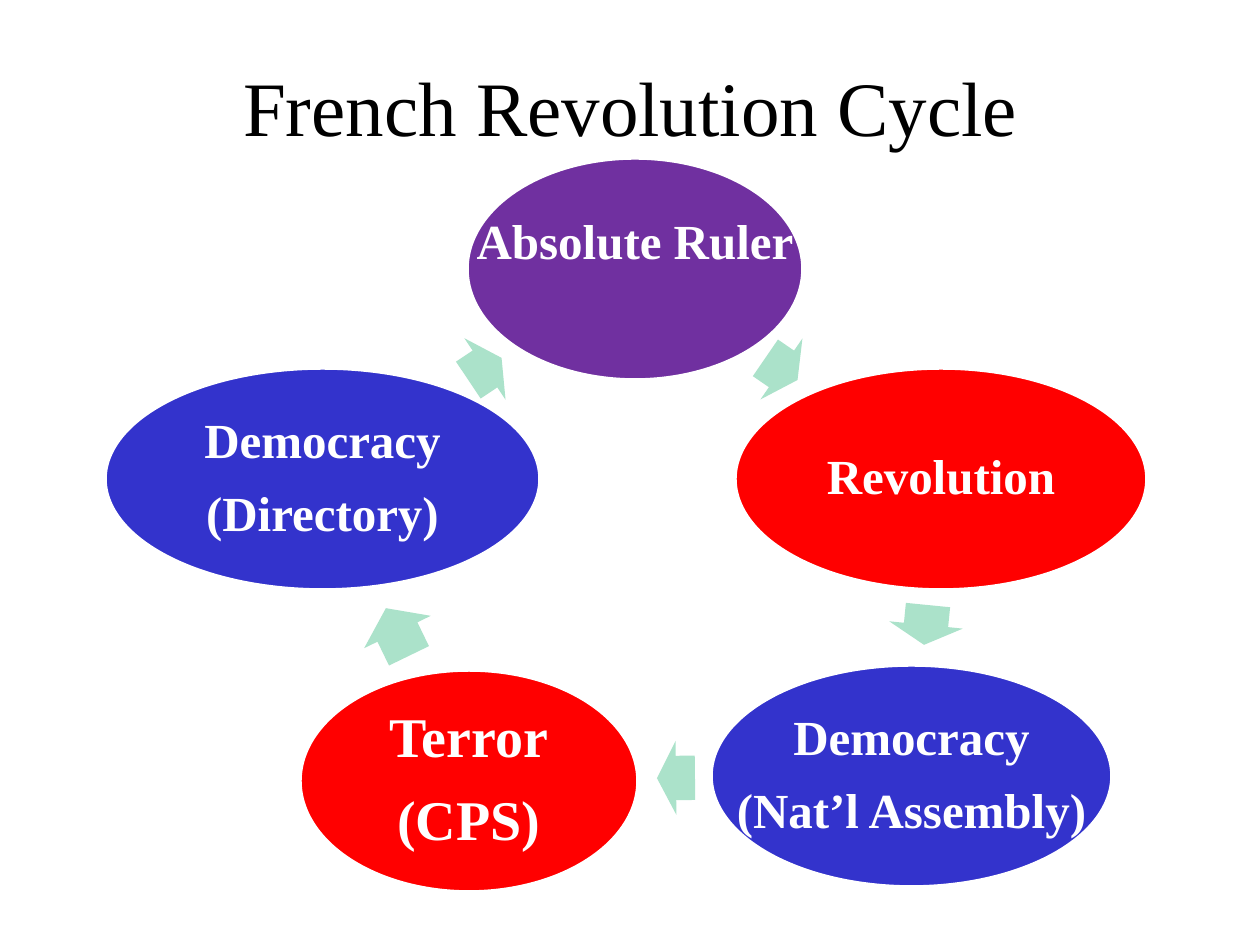
from pptx import Presentation
from pptx import util as u
from pptx.dml.color import RGBColor
from pptx.enum import shapes, text

PX = u.Inches(1) // 126
FONT = "Times New Roman"
BLACK = RGBColor(0x00, 0x00, 0x00)
WHITE = RGBColor(0xFF, 0xFF, 0xFF)
PURPLE = RGBColor(0x70, 0x30, 0xA0)
RED = RGBColor(0xFF, 0x00, 0x00)
BLUE = RGBColor(0x33, 0x33, 0xCC)
MINT = RGBColor(0xAB, 0xE2, 0xCA)

STAGE_HEIGHT = 222
ARROW_HEIGHT = 74

# left, top, width, fill, text size, lines, bottom inset
STAGES = [
    (467, 158, 336, PURPLE, 28, "Absolute Ruler", 55),
    (735, 368, 412, RED, 28, "Revolution", 5),
    (711, 665, 401, BLUE, 28, "Democracy\n(Nat’l Assembly)", 5),
    (300, 670, 338, RED, 32, "Terror\n(CPS)", 5),
    (105, 368, 435, BLUE, 28, "Democracy\n(Directory)", 5),
]
# left, top, length, rotation
ARROWS = [
    (762, 332, 39, 34.5),
    (906, 588, 40, 95.7),
    (657, 741, 38, 179.3),
    (371, 595, 53, 244.1),
    (465, 332, 40, 326.2),
]


def scaled(*lengths):
    return [length * PX for length in lengths]


def format_text(frame, size, color, bold=False):
    for para in frame.paragraphs:
        para.alignment = text.PP_ALIGN.CENTER
        for span in para.runs:
            span.font.name = FONT
            span.font.size = u.Pt(size)
            span.font.bold = bold
            span.font.color.rgb = color


def add_title(page, words):
    title = page.shapes.title
    title.left, title.top, title.width, title.height = scaled(95, 53, 1071, 105)
    title.text_frame.text = words
    title.text_frame.vertical_anchor = text.MSO_ANCHOR.MIDDLE
    format_text(title.text_frame, 44, BLACK)


def add_solid(page, preset, box, fill):
    solid = page.shapes.add_shape(preset, *scaled(*box))
    solid.shadow.inherit = False
    solid.fill.solid()
    solid.fill.fore_color.rgb = fill
    return solid


def add_stage(page, left, top, width, fill, size, words, bottom):
    oval = add_solid(page, shapes.MSO_SHAPE.OVAL,
                     (left, top, width, STAGE_HEIGHT), fill)
    oval.line.color.rgb = WHITE
    oval.line.width = u.Pt(2)
    frame = oval.text_frame
    frame.word_wrap = False
    frame.vertical_anchor = text.MSO_ANCHOR.MIDDLE
    frame.margin_left = frame.margin_right = frame.margin_top = 5 * PX
    frame.margin_bottom = bottom * PX
    frame.text = words
    format_text(frame, size, WHITE, bold=True)
    for para in frame.paragraphs:
        para.line_spacing = 0.9
        para.space_after = u.Pt(0.4 * size)


def add_arrow(page, left, top, length, rotation):
    arrow = add_solid(page, shapes.MSO_SHAPE.RIGHT_ARROW,
                      (left, top, length, ARROW_HEIGHT), MINT)
    arrow.line.fill.background()
    arrow.adjustments[0] = 0.6
    arrow.adjustments[1] = 0.5
    arrow.rotation = rotation


def main():
    deck = Presentation()
    deck.slide_width, deck.slide_height = scaled(1260, 945)
    page = deck.slides.add_slide(deck.slide_layouts[5])
    add_title(page, "French Revolution Cycle")
    for stage, arrow in zip(STAGES, ARROWS):
        add_stage(page, *stage)
        add_arrow(page, *arrow)
    deck.save("out.pptx")


if __name__ == "__main__":
    main()
